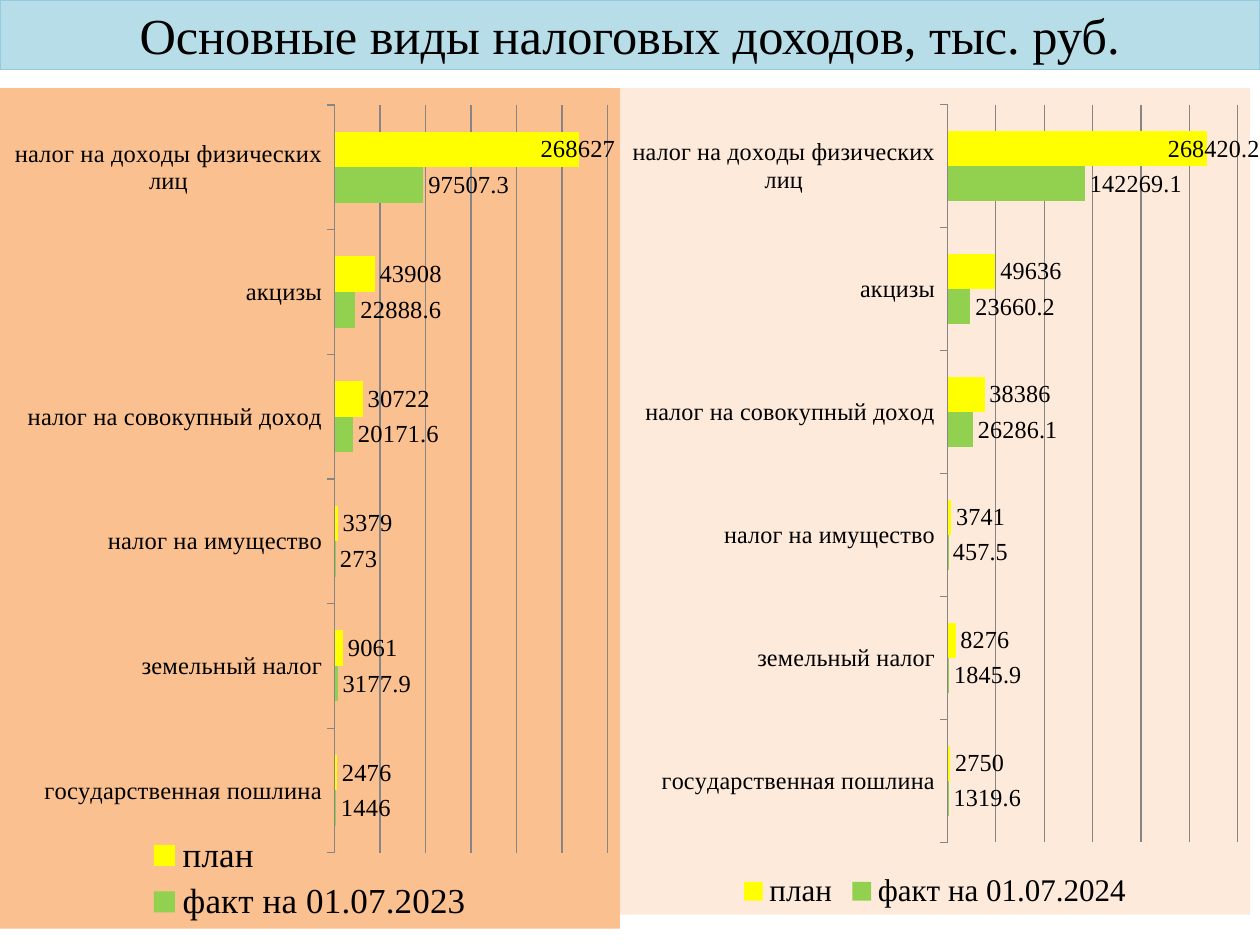
from dataclasses import dataclass

import pptx
import pptx.chart.data
import pptx.dml.color
import pptx.enum.chart
import pptx.enum.shapes
import pptx.enum.text
import pptx.oxml
import pptx.oxml.ns
import pptx.util

Pt = pptx.util.Pt
ENUM = pptx.enum.chart
FACE = "Times New Roman"
HUES = {
    "text": "000000",
    "band": "B7DEE8",
    "edge": "93CDDD",
    "fact": "92D050",
    "plan": "FFFF00",
    "grid": "868686",
    "warm": "FAC090",
    "pale": "FDEADA",
}
TAXES = [
    "государственная пошлина",
    "земельный налог",
    "налог на имущество",
    "налог на совокупный доход",
    "акцизы",
    "налог на доходы физических лиц",
]


@dataclass
class Panel:
    left: float
    width: float
    height: float
    fill: str
    date: str
    fact: list[float]
    plan: list[float]
    key: float
    shift: tuple[float, float]
    plot: tuple[float, ...] = ()


PANELS = [
    Panel(354.24, 365.76, 472.32, "pale", "01.07.2024",
          [1319.6, 1845.9, 457.5, 26286.1, 23660.2, 142269.1],
          [2750, 8276, 3741, 38386, 49636, 268420.2],
          18, (-0.07, 0)),
    Panel(0, 354.24, 480.24, "warm", "01.07.2023",
          [1446, 3177.9, 273, 20171.6, 22888.6, 97507.3],
          [2476, 9061, 3379, 30722, 43908, 268627],
          20, (-0.07, 0), (0.54, 0.02, 0.44, 0.89)),
]


def tint(name: str) -> pptx.dml.color.RGBColor:
    return pptx.dml.color.RGBColor.from_string(HUES[name])


def apply(item, **form) -> None:
    for name, value in form.items():
        setattr(item, name, value)


def style(font, size: float, face: str = FACE) -> None:
    apply(font, size=Pt(size), name=face)
    font.color.rgb = tint("text")


def paint(fill, name: str) -> None:
    fill.solid()
    fill.fore_color.rgb = tint(name)


def layout(tags: dict):
    body = "".join(f'<c:{tag} val="{value}"/>' for tag, value in tags.items())
    return pptx.oxml.parse_xml(
        f'<c:layout {pptx.oxml.ns.nsdecls("c")}>'
        f"<c:manualLayout>{body}</c:manualLayout></c:layout>"
    )


def back(chart, name: str) -> None:
    shape = pptx.oxml.parse_xml(
        f'<c:spPr {pptx.oxml.ns.nsdecls("c", "a")}><a:solidFill>'
        f'<a:srgbClr val="{HUES[name]}"/></a:solidFill>'
        "<a:ln><a:noFill/></a:ln></c:spPr>"
    )
    chart._chartSpace.xpath("c:txPr")[0].addprevious(shape)


def place(chart, plot: tuple[float, ...]) -> None:
    area = chart._chartSpace.xpath("c:chart/c:plotArea")[0]
    for old in area.xpath("c:layout"):
        area.remove(old)
    tags = {"layoutTarget": "inner", "xMode": "edge", "yMode": "edge"}
    area.insert(0, layout(tags | dict(zip("xywh", plot))))


def label(row, hue: str) -> None:
    paint(row.format.fill, hue)
    row.invert_if_negative = False
    marks = row.data_labels
    apply(marks, show_value=True, number_format="General",
          number_format_is_linked=False,
          position=ENUM.XL_LABEL_POSITION.OUTSIDE_END)
    style(marks.font, 14)


def nudge(row, shift: tuple[float, float]) -> None:
    mark = row.points[len(TAXES) - 1].data_label
    mark.position = ENUM.XL_LABEL_POSITION.OUTSIDE_END
    style(mark.font, 14)
    index = row._element.xpath("c:dLbls/c:dLbl/c:idx")[0]
    index.addnext(layout(dict(zip("xy", shift))))


def draw(slide, panel: Panel) -> None:
    data = pptx.chart.data.CategoryChartData()
    data.categories = TAXES
    data.add_series(f"факт на {panel.date}", panel.fact)
    data.add_series("план", panel.plan)
    chart = slide.shapes.add_chart(
        ENUM.XL_CHART_TYPE.BAR_CLUSTERED, Pt(panel.left), Pt(50.4),
        Pt(panel.width), Pt(panel.height), data
    ).chart
    apply(chart, has_title=False, has_legend=True)
    style(chart.font, 18, "Calibri")
    back(chart, panel.fill)
    apply(chart.legend, include_in_layout=False,
          position=ENUM.XL_LEGEND_POSITION.BOTTOM)
    style(chart.legend.font, panel.key)
    apply(chart.plots[0], gap_width=150, overlap=0, vary_by_categories=False)
    for row, hue in zip(chart.plots[0].series, ("fact", "plan")):
        label(row, hue)
    nudge(chart.plots[0].series[1], panel.shift)
    style(chart.category_axis.tick_labels.font, 14)
    apply(chart.category_axis, major_tick_mark=ENUM.XL_TICK_MARK.OUTSIDE)
    apply(chart.value_axis, visible=False, has_major_gridlines=True)
    for line in (chart.category_axis.format.line,
                 chart.value_axis.major_gridlines.format.line):
        line.width = Pt(0.75)
        line.color.rgb = tint("grid")
    if panel.plot:
        place(chart, panel.plot)


def head(slide, text: str) -> None:
    band = slide.shapes.add_shape(
        pptx.enum.shapes.MSO_SHAPE.RECTANGLE, Pt(0), Pt(0), Pt(720), Pt(39.6)
    )
    band.shadow.inherit = False
    paint(band.fill, "band")
    band.line.color.rgb = tint("edge")
    band.line.width = Pt(0.75)
    apply(band.text_frame, text=text, word_wrap=True,
          margin_top=Pt(0), margin_bottom=Pt(0),
          vertical_anchor=pptx.enum.text.MSO_ANCHOR.MIDDLE)
    line = band.text_frame.paragraphs[0]
    line.alignment = pptx.enum.text.PP_ALIGN.CENTER
    style(line.runs[0].font, 28.8)


def main() -> None:
    deck = pptx.Presentation()
    apply(deck, slide_width=Pt(720), slide_height=Pt(540))
    slide = deck.slides.add_slide(deck.slide_layouts[6])
    head(slide, "Основные виды налоговых доходов, тыс. руб.")
    for panel in PANELS:
        draw(slide, panel)
    deck.save("out.pptx")


if __name__ == "__main__":
    main()
